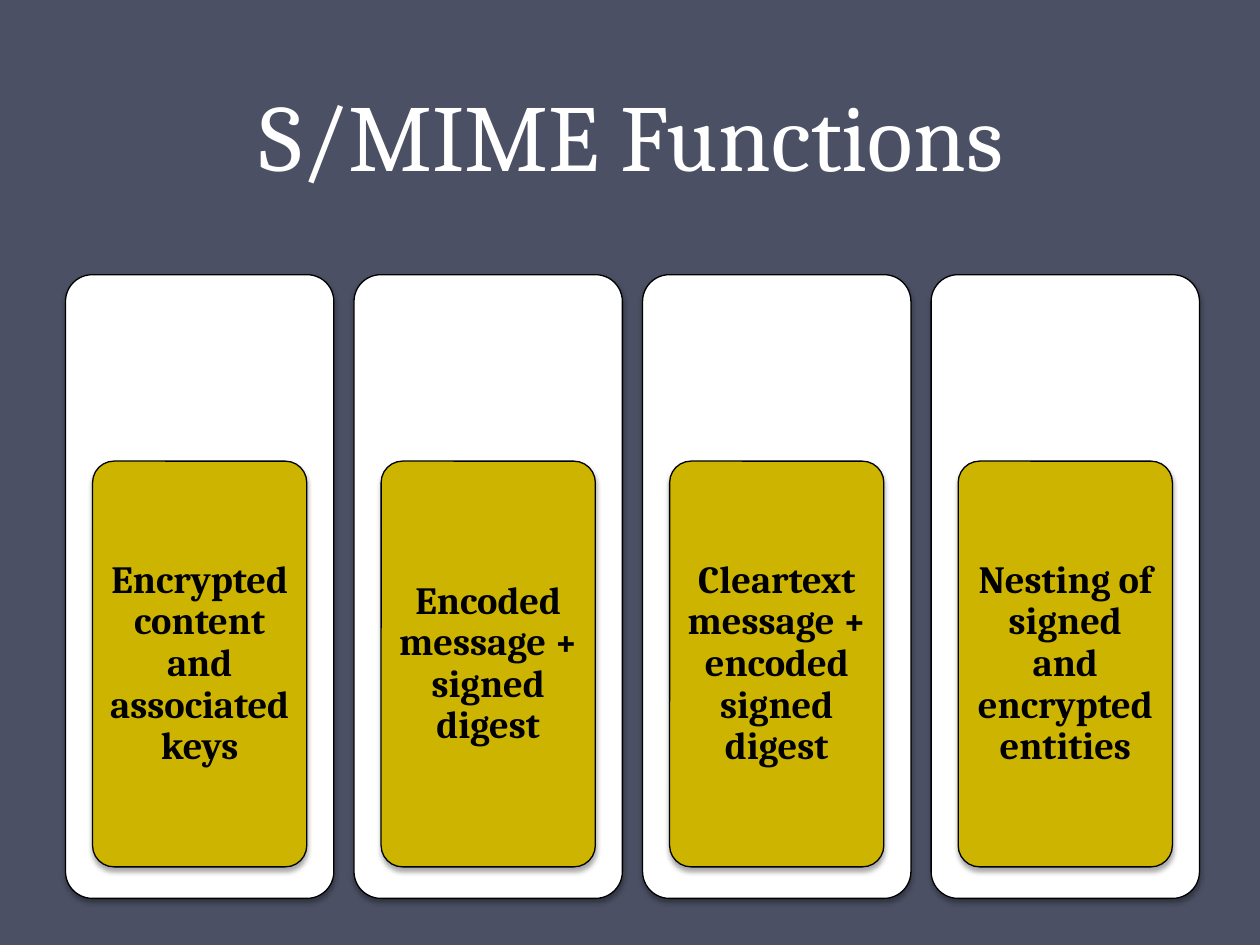
from dataclasses import dataclass

import pptx
import pptx.dml.color
import pptx.enum.shapes
import pptx.enum.text
import pptx.oxml
import pptx.oxml.ns
import pptx.util
from pptx.util import Inches


@dataclass(frozen=True)
class Theme:
    font: str = "Cambria"
    background: str = "4B5064"
    title_color: str = "FFFFFF"
    panel_fill: str = "FFFFFF"
    card_fill: str = "CCB400"
    ink: str = "000000"
    title_size: float = 54
    title_leading: float = 58
    card_size: float = 22
    outline: float = 0.75
    corner: float = 0.1


def rgb(value):
    return pptx.dml.color.RGBColor.from_string(value)


class SlideBuilder:
    def __init__(self, slide, theme):
        self.slide = slide
        self.theme = theme
        fill = slide.background.fill
        fill.solid()
        fill.fore_color.rgb = rgb(theme.background)

    def set_text(self, shape, text, size, color, anchor, bold=False):
        """Fill a shape with one centred paragraph and return the paragraph."""
        frame = shape.text_frame
        frame.word_wrap = True
        frame.vertical_anchor = anchor
        paragraph = frame.paragraphs[0]
        paragraph.text = text
        paragraph.alignment = pptx.enum.text.PP_ALIGN.CENTER
        font = paragraph.font
        font.name = self.theme.font
        font.size = pptx.util.Pt(size)
        font.bold = bold
        font.color.rgb = rgb(color)
        return paragraph

    def title(self, text, left, top, width, height):
        heading = self.slide.shapes.add_textbox(
            Inches(left), Inches(top), Inches(width), Inches(height))
        paragraph = self.set_text(heading, text, self.theme.title_size, self.theme.title_color,
                                  pptx.enum.text.MSO_ANCHOR.BOTTOM)
        paragraph.line_spacing = pptx.util.Pt(self.theme.title_leading)

    def panel(self, left, top, width, height, color):
        """Add a rounded, outlined rectangle with a soft shadow below it."""
        panel = self.slide.shapes.add_shape(
            pptx.enum.shapes.MSO_SHAPE.ROUNDED_RECTANGLE,
            Inches(left), Inches(top), Inches(width), Inches(height))
        panel.adjustments[0] = self.theme.corner
        panel.fill.solid()
        panel.fill.fore_color.rgb = rgb(color)
        panel.line.color.rgb = rgb(self.theme.ink)
        panel.line.width = pptx.util.Pt(self.theme.outline)
        self.drop_shadow(panel)
        return panel

    def drop_shadow(self, shape):
        shape.shadow.inherit = False
        effects = shape.element.spPr.find(pptx.oxml.ns.qn("a:effectLst"))
        blur, distance = pptx.util.Pt(3.1), pptx.util.Pt(1.8)
        effects.append(pptx.oxml.parse_xml(
            f'<a:outerShdw {pptx.oxml.ns.nsdecls("a")} blurRad="{blur}" dist="{distance}" '
            f'dir="5400000" rotWithShape="0"><a:srgbClr val="{self.theme.ink}">'
            '<a:alpha val="35000"/></a:srgbClr></a:outerShdw>'))

    def card(self, text, left, top, width, height):
        card = self.panel(left, top, width, height, self.theme.card_fill)
        frame = card.text_frame
        frame.margin_left = frame.margin_right = Inches(0.06)
        frame.margin_top = frame.margin_bottom = Inches(0.05)
        paragraph = self.set_text(card, text, self.theme.card_size, self.theme.ink,
                                  pptx.enum.text.MSO_ANCHOR.MIDDLE, bold=True)
        paragraph.line_spacing = 0.9


FUNCTIONS = [
    "Encrypted content and associated keys",
    "Encoded message + signed digest",
    "Cleartext message + encoded signed digest",
    "Nesting of signed and encrypted entities",
]
FIRST_LEFT, COLUMN_STEP = 0.52, 2.29
PANEL_WIDTH, CARD_WIDTH = 2.13, 1.7


def main():
    presentation = pptx.Presentation()
    presentation.slide_width = Inches(10)
    presentation.slide_height = Inches(7.5)
    theme = Theme()
    builder = SlideBuilder(
        presentation.slides.add_slide(presentation.slide_layouts[6]), theme)

    builder.title("S/MIME Functions", 0.51, -0.19, 9, 1.75)
    for column, function in enumerate(FUNCTIONS):
        left = FIRST_LEFT + column * COLUMN_STEP
        builder.panel(left, 2.18, PANEL_WIDTH, 4.95, theme.panel_fill)
        card_left = left + (PANEL_WIDTH - CARD_WIDTH) / 2
        builder.card(function, card_left, 3.66, CARD_WIDTH, 3.22)

    presentation.save("out.pptx")


if __name__ == "__main__":
    main()
